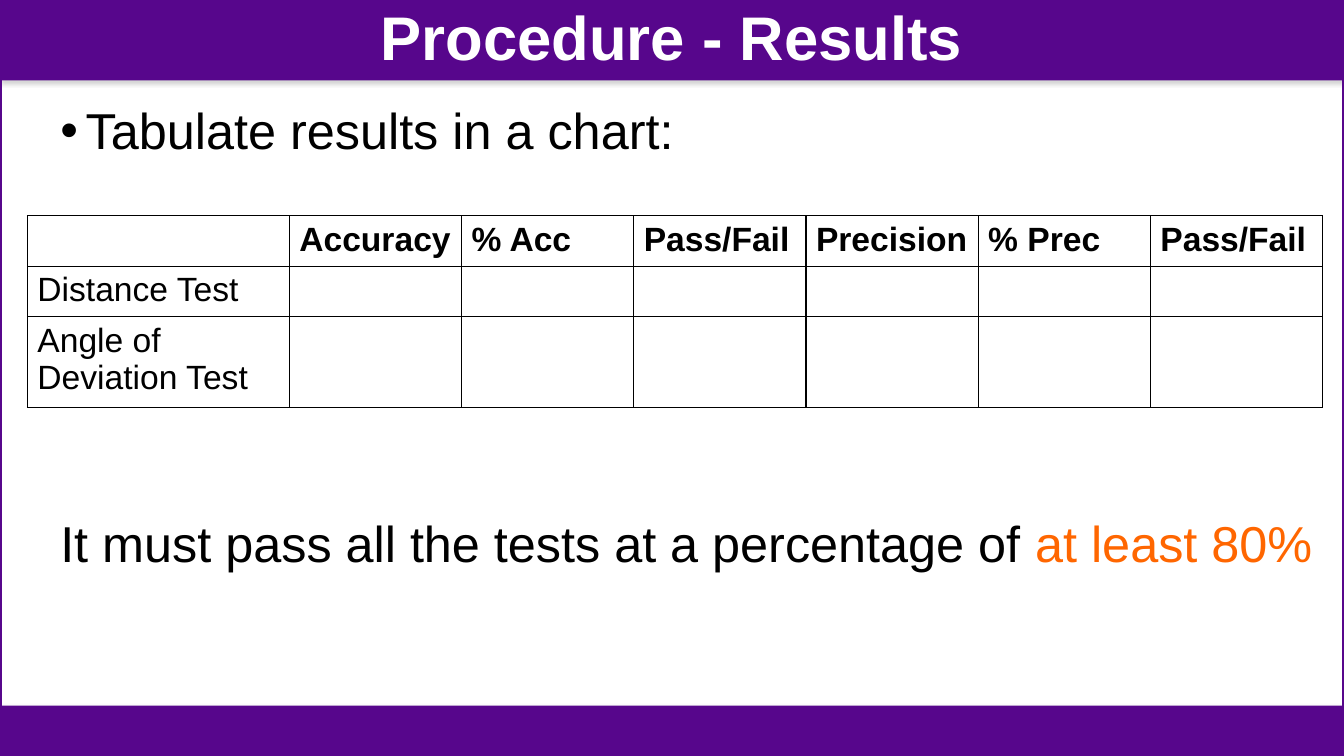
"""Build the "Procedure - Results" slide with its results table."""
from lxml import etree
from pptx import Presentation
from pptx.dml.color import RGBColor
from pptx.enum.shapes import MSO_SHAPE
from pptx.enum.text import MSO_ANCHOR as ANCHOR, PP_ALIGN as ALIGN
from pptx.oxml import parse_xml
from pptx.oxml.ns import nsdecls, qn
from pptx.util import Cm, Pt

COLORS = {"purple": "57068C", "white": "FFFFFF", "black": "000000",
          "orange": "FF6600", "shadow": "808080"}
WIDTH, HEIGHT = Cm(33.87), Cm(19.05)
BAR_H = Cm(2.03)


def rgb(name):
    return RGBColor.from_string(COLORS[name])


def style(p, size, color, bold=False):
    for r in p.runs:
        r.font.name = "Arial"
        r.font.size = Pt(size)
        r.font.bold = bold
        r.font.color.rgb = rgb(color)


prs = Presentation()
prs.slide_width, prs.slide_height = WIDTH, HEIGHT
s = prs.slides.add_slide(prs.slide_layouts[6])

for top, height, filled in [(0, BAR_H, True), (0, HEIGHT, False),
                            (Cm(17.78), Cm(1.27), True)]:
    sp = s.shapes.add_shape(MSO_SHAPE.RECTANGLE, 0, top, WIDTH, height)
    sp.shadow.inherit = False
    if filled:
        sp.fill.solid()
        sp.fill.fore_color.rgb = rgb("purple")
        sp.line.fill.background()
        effects = sp._element.spPr.find(qn("a:effectLst"))
        effects.append(parse_xml(
            f'<a:outerShdw {nsdecls("a")} blurRad="39370" dist="22860" dir="5400000" rotWithShape="0">'
            f'<a:srgbClr val="{COLORS["shadow"]}"><a:alpha val="35000"/></a:srgbClr></a:outerShdw>'))
    else:
        sp.fill.background()
        sp.line.color.rgb = rgb("purple")
        sp.line.width = Pt(2.25)

title = s.shapes.add_textbox(0, 0, WIDTH, BAR_H)
tf = title.text_frame
tf.word_wrap = True
tf.vertical_anchor = ANCHOR.MIDDLE
p = tf.paragraphs[0]
p.text = "Procedure - Results"
p.alignment = ALIGN.CENTER
p.line_spacing = 0.9
style(p, 44, "white", True)

body = s.shapes.add_textbox(0, Cm(2.54), WIDTH, Cm(14.83))
tf = body.text_frame
tf.word_wrap = True
p = tf.paragraphs[0]
p.text = "Tabulate results in a chart:"
pPr = p._p.get_or_add_pPr()
pPr.set("marL", str(Cm(1.91)))
pPr.set("indent", str(-Cm(0.64)))
etree.SubElement(pPr, qn("a:buFont"), typeface="Arial")
etree.SubElement(pPr, qn("a:buChar"), char="•")
p.line_spacing = 0.9
style(p, 36, "black")

p = tf.add_paragraph()
p.text = "It must pass all the tests at a percentage of "
p._p.get_or_add_pPr().set("marL", str(Cm(1.27)))
p.line_spacing = 0.9
p.space_before = Pt(256)
r = p.add_run()
r.text = "at least 80%"
style(p, 36, "black")
r.font.color.rgb = rgb("orange")

rows = [
    ["", "Accuracy", "% Acc", "Pass/Fail", "Precision", "% Prec", "Pass/Fail"],
    ["Distance Test"] + [""] * 6,
    ["Angle of Deviation Test"] + [""] * 6,
]
col_widths = [Cm(6.6)] + [Cm(4.34)] * 6
row_heights = [Cm(1.2), Cm(1.2), Cm(2.14)]
table = s.shapes.add_table(len(rows), len(col_widths), Cm(0.69), Cm(5.44),
                           sum(col_widths), sum(row_heights)).table
table.first_row = table.horz_banding = False
for column, width in zip(table.columns, col_widths):
    column.width = width
for i, texts in enumerate(rows):
    table.rows[i].height = row_heights[i]
    for j, text in enumerate(texts):
        cell = table.cell(i, j)
        tcPr = cell._tc.get_or_add_tcPr()
        for side in ("lnL", "lnR", "lnT", "lnB"):
            tcPr.append(parse_xml(
                f'<a:{side} {nsdecls("a")} w="{Pt(1)}"><a:solidFill>'
                f'<a:srgbClr val="{COLORS["black"]}"/></a:solidFill></a:{side}>'))
        cell.fill.background()
        if text:
            cell.text_frame.text = text
            style(cell.text_frame.paragraphs[0], 24, "black", i == 0)

prs.save("out.pptx")
